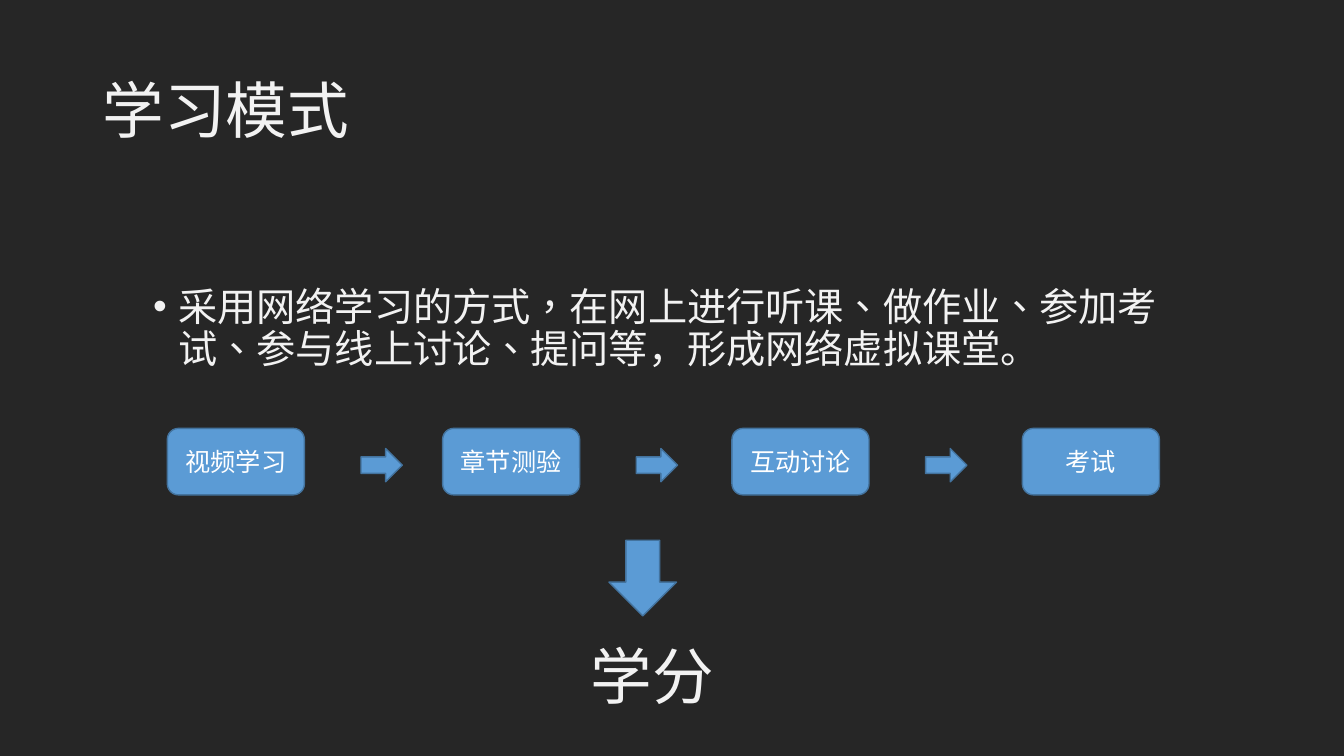
import pptx
import pptx.util
import pptx.dml.color
import pptx.enum.lang
import pptx.enum.shapes
import pptx.enum.text
import pptx.oxml
import pptx.oxml.ns
from dataclasses import dataclass

PX = 9144  # 100 px to the inch
SHAPE = pptx.enum.shapes.MSO_SHAPE
ALIGN = pptx.enum.text.PP_ALIGN
ANCHOR = pptx.enum.text.MSO_ANCHOR
LANG = pptx.enum.lang.MSO_LANGUAGE_ID
SIMPLIFIED, TRADITIONAL = LANG.SIMPLIFIED_CHINESE, LANG.TRADITIONAL_CHINESE


@dataclass(frozen=True)
class Theme:
    font: str = "Noto Sans CJK SC"
    background: str = "262626"
    text: str = "F2F2F2"
    label: str = "FFFFFF"
    fill: str = "5B9BD5"
    line: str = "43739E"
    title_size: int = 44
    body_size: int = 28
    label_size: int = 18


THEME = Theme()


def rgb(value):
    return pptx.dml.color.RGBColor.from_string(value)


def px(*lengths):
    return [pptx.util.Emu(length * PX) for length in lengths]


def add_run(p, text, size, color, lang=SIMPLIFIED):
    r = p.add_run()
    r.text = text
    r.font.size = pptx.util.Pt(size)
    r.font.name = THEME.font
    r.font.color.rgb = rgb(color)
    r.font.language_id = lang
    ea = pptx.oxml.parse_xml(
        f'<a:ea {pptx.oxml.ns.nsdecls("a")} typeface="{THEME.font}"/>')
    r.font._element.find(pptx.oxml.ns.qn("a:latin")).addnext(ea)


def add_text_box(slide, box, anchor=ANCHOR.TOP):
    tf = slide.shapes.add_textbox(*px(*box)).text_frame
    tf.word_wrap = True
    tf.vertical_anchor = anchor
    return tf.paragraphs[0]


def add_block(slide, kind, box):
    sp = slide.shapes.add_shape(kind, *px(*box))
    sp.shadow.inherit = False
    sp.fill.solid()
    sp.fill.fore_color.rgb = rgb(THEME.fill)
    sp.line.color.rgb = rgb(THEME.line)
    sp.line.width = pptx.util.Pt(1)
    return sp


def add_title(slide, box, text):
    p = add_text_box(slide, box, ANCHOR.MIDDLE)
    p.line_spacing = 0.9
    add_run(p, text, THEME.title_size, THEME.text)


def add_bullet(slide, box, runs):
    p = add_text_box(slide, box)
    p.line_spacing = 0.9
    p.space_before = pptx.util.Pt(10)
    for text, lang in runs:
        add_run(p, text, THEME.body_size, THEME.text, lang)
    # Hanging bullet
    pPr = p._p.get_or_add_pPr()
    indent, = px(25)
    pPr.set("marL", str(indent))
    pPr.set("indent", str(-indent))
    for xml in ('<a:buFont {} typeface="Arial"/>', '<a:buChar {} char="•"/>'):
        pPr.append(pptx.oxml.parse_xml(xml.format(pptx.oxml.ns.nsdecls("a"))))


def add_flow(slide, box, steps):
    """Steps are (offset, label); an arrow follows every step but the last."""
    left, top, step_width, height = box
    for i, (offset, label) in enumerate(steps):
        x = left + offset
        sp = add_block(slide, SHAPE.ROUNDED_RECTANGLE,
                       (x, top, step_width, height))
        tf = sp.text_frame
        tf.word_wrap = True
        tf.vertical_anchor = ANCHOR.MIDDLE
        p = tf.paragraphs[0]
        p.alignment = ALIGN.CENTER
        add_run(p, label, THEME.label_size, THEME.label)
        if i < len(steps) - 1:
            add_block(slide, SHAPE.RIGHT_ARROW, (x + 192, top + 20, 41, 33))


def add_result(slide, box, text):
    left, top, width, height = box
    add_block(slide, SHAPE.DOWN_ARROW, (left + 28, top, 67, 75))
    p = add_text_box(slide, (left, top + 92, width, height - 92))
    add_run(p, text, THEME.title_size, THEME.text)


def main():
    prs = pptx.Presentation()
    prs.slide_width = pptx.util.Inches(13.33)
    prs.slide_height = pptx.util.Inches(7.5)
    slide = prs.slides.add_slide(prs.slide_layouts[6])
    slide.background.fill.solid()
    slide.background.fill.fore_color.rgb = rgb(THEME.background)

    add_title(slide, (92, 40, 1150, 145), "学习模式")
    add_bullet(slide, (142, 280, 1050, 363), [
        ("采用网络学习的方式，在网上进行听课、做作业、参加考试、参与线上讨论、提问等", TRADITIONAL),
        ("，形成网络虚拟课堂。", SIMPLIFIED),
    ])
    add_flow(slide, (166, 425, 136, 66), [
        (0, "视频学习"), (273, "章节测验"), (560, "互动讨论"), (848, "考试")])
    add_result(slide, (576, 536, 150, 176), "学分")

    prs.save("out.pptx")


if __name__ == "__main__":
    main()
